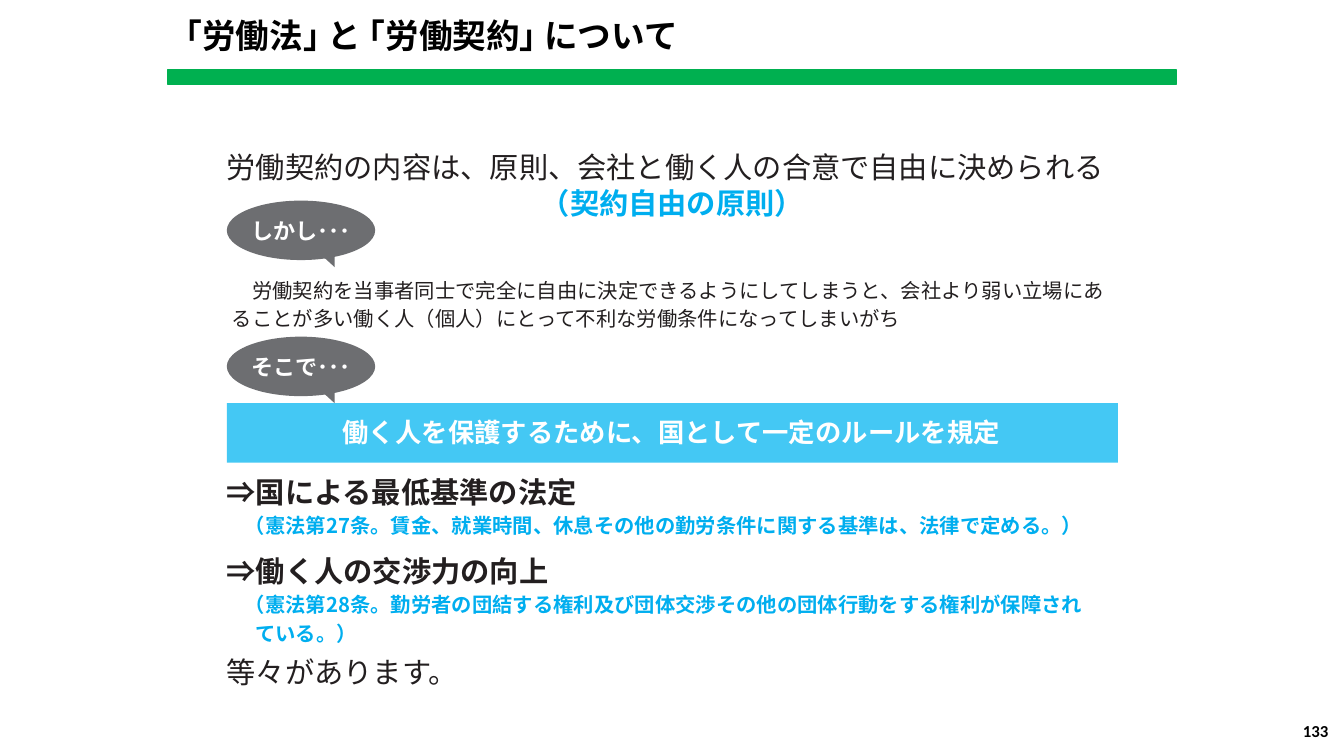
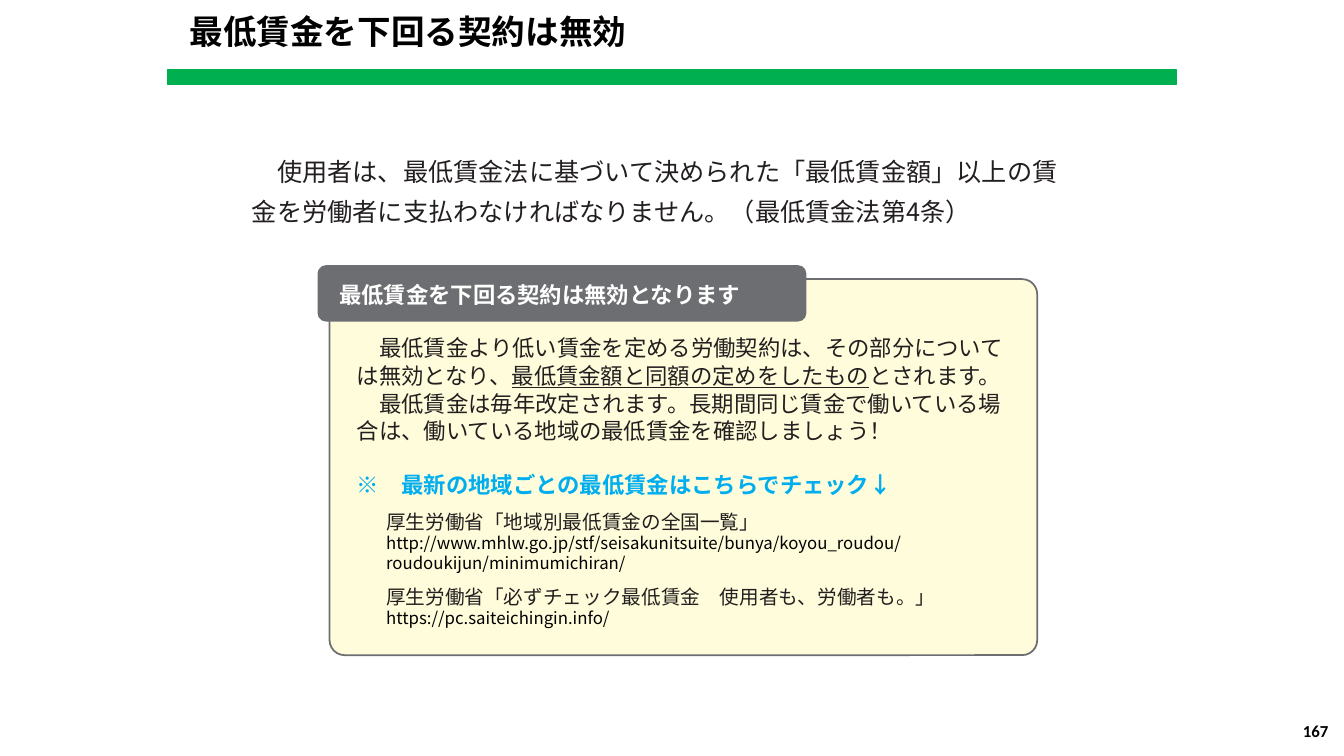
import pptx
import pptx.util
import pptx.dml.color
import pptx.enum.shapes
import pptx.enum.text
import pptx.oxml.ns
from lxml import etree

Pt = pptx.util.Pt
SHAPES = pptx.enum.shapes.MSO_SHAPE
ALIGN = pptx.enum.text.PP_ALIGN
ANCHOR = pptx.enum.text.MSO_ANCHOR
qn = pptx.oxml.ns.qn

COLORS = {
    "green": "00B050", "gray": "6D6E71", "sky": "44C8F4", "cyan": "00AEEF",
    "cream": "FFFCDB", "ink": "231F20", "black": "000000", "white": "FFFFFF",
}
JAPANESE = "Noto Sans CJK JP"

# Text formats
TITLE = {"size": 24, "color": "black", "bold": True}
NUMBER = {"size": 12, "color": "black", "bold": True, "name": "Calibri"}
LEAD = {"size": 20.9, "color": "ink"}
HEADING = LEAD | {"bold": True}
PRINCIPLE = HEADING | {"color": "cyan"}
BALLOON = {"size": 15.8, "color": "white", "bold": True}
BANNER = {"size": 18.8, "color": "white", "bold": True}
DETAIL = {"size": 14.5, "color": "ink"}
ARTICLE = {"size": 14.5, "color": "cyan", "bold": True}
INTRO = {"size": 18, "color": "ink"}
BODY = {"size": 16, "color": "ink"}
UNDERLINED = BODY | {"underline": True}
TAB = {"size": 16, "color": "white", "bold": True}
CHECK = TAB | {"color": "cyan"}
SOURCE = {"size": 14, "color": "ink"}
ADDRESS = {"size": 12, "color": "black"}


def write(shape, paragraphs, insets=(0, 0, 0, 0), anchor=ANCHOR.TOP, wrap=True):
    """Fill a shape with (paragraph format, [(text, font format), ...]) pairs."""
    frame = shape.text_frame
    frame_format = {"word_wrap": wrap, "vertical_anchor": anchor,
                    "auto_size": pptx.enum.text.MSO_AUTO_SIZE.NONE}
    sides = ("margin_left", "margin_top", "margin_right", "margin_bottom")
    frame_format |= {side: Pt(inset) for side, inset in zip(sides, insets)}
    for name, value in frame_format.items():
        setattr(frame, name, value)
    for index, (layout, runs) in enumerate(paragraphs):
        paragraph = frame.add_paragraph() if index else frame.paragraphs[0]
        defaults = {"alignment": ALIGN.LEFT, "space_before": Pt(0),
                    "space_after": Pt(0), "line_spacing": 1.0}
        for name, value in (defaults | layout).items():
            if name != "indent":
                setattr(paragraph, name, value)
        properties = paragraph._p.get_or_add_pPr()
        properties.set("marL", str(Pt(layout.get("indent", 0))))
        properties.set("indent", "0")
        etree.SubElement(properties, qn("a:buNone"))
        for text, style in runs:
            run = paragraph.add_run()
            run.text = text.rstrip("\n")
            font_format = {"name": JAPANESE, "bold": False} | style
            font_format["size"] = Pt(style["size"])
            color = font_format.pop("color")
            for name, value in font_format.items():
                setattr(run.font, name, value)
            run.font.color.rgb = pptx.dml.color.RGBColor.from_string(COLORS[color])
            east_asian = etree.SubElement(run._r.get_or_add_rPr(), qn("a:ea"))
            east_asian.set("typeface", font_format["name"])
            if text.endswith("\n"):
                paragraph.add_line_break()


def paint(shape, fill, line=None, width=1):
    """Give a shape a flat fill and an optional outline."""
    shape.shadow.inherit = False
    shape.fill.solid()
    shape.fill.fore_color.rgb = pptx.dml.color.RGBColor.from_string(COLORS[fill])
    if line:
        shape.line.color.rgb = pptx.dml.color.RGBColor.from_string(COLORS[line])
        shape.line.width = Pt(width)
    else:
        shape.line.fill.background()
    return shape


presentation = pptx.Presentation()
presentation.slide_width, presentation.slide_height = Pt(960), Pt(540)

# Shared frame: title, green band, page number
pages = [
    ("｢労働法｣ と ｢労働契約｣ について", 132.5, 1.0, "133"),
    ("最低賃金を下回る契約は無効", 135.4, Pt(25.5), "167"),
]
for title, left, spacing, number in pages:
    slide = presentation.slides.add_slide(presentation.slide_layouts[1])
    shape = slide.shapes.title
    shape.left, shape.top, shape.width, shape.height = Pt(left), Pt(10.8), Pt(420), Pt(32)
    write(shape, [({"line_spacing": spacing}, [(title, TITLE)])])
    band = slide.shapes.add_shape(SHAPES.RECTANGLE, Pt(120), Pt(49.7), Pt(720), Pt(10.8))
    paint(band, "green", "green")
    page_number = slide.shapes.add_textbox(Pt(732), Pt(511.2), Pt(224), Pt(28.8))
    write(page_number, [({"alignment": ALIGN.RIGHT}, [(number, NUMBER)])],
          (7.2, 3.6, 7.2, 3.6))

contract_slide, wage_slide = presentation.slides

# Slide 1: freedom of contract
shapes = contract_slide.shapes
principle = shapes.add_textbox(Pt(161.3), Pt(102.2), Pt(638), Pt(57))
write(principle, [
    ({"indent": 0.7}, [("労働契約の内容は、原則、会社と働く人の合意で自由に決められる", LEAD)]),
    ({"alignment": ALIGN.CENTER, "line_spacing": Pt(22.6), "space_before": Pt(3.5)},
     [("（契約自由の原則）", PRINCIPLE)]),
], (0, 4.3, 0, 0))

# Speech balloons with tails
for text, top in (("しかし･･･", 143.3), ("そこで･･･", 240.5)):
    builder = shapes.build_freeform(Pt(239), Pt(top + 28.8))
    builder.add_line_segments([(Pt(224), Pt(top + 33.8)), (Pt(239), Pt(top + 47.5))])
    paint(builder.convert_to_shape(), "gray")
    balloon = shapes.add_shape(SHAPES.OVAL, Pt(162), Pt(top), Pt(106), Pt(42.5))
    write(paint(balloon, "gray"), [({"alignment": ALIGN.CENTER}, [(text, BALLOON)])],
          anchor=ANCHOR.MIDDLE, wrap=False)

problem = shapes.add_textbox(Pt(161.3), Pt(191.5), Pt(638), Pt(42.5))
write(problem, [({"indent": 4.3, "line_spacing": 1.16, "space_before": Pt(15.7)}, [
    ("　労働契約を当事者同士で完全に自由に決定できるようにしてしまうと、会社より弱い立場に"
     "あることが多い働く人（個人）にとって不利な労働条件になってしまいがち", DETAIL)])],
    (0, 4.3, 0, 0))

banner = shapes.add_shape(SHAPES.RECTANGLE, Pt(162), Pt(288), Pt(636.5), Pt(42.5))
write(paint(banner, "sky"), [({"indent": 82.8, "space_before": Pt(9.6)}, [
    ("働く人を保護するために、国として一定のルールを規定", BANNER)])], (0, 9.4, 0, 9.4))

# Rules set by the state: indent, space before, text, format
rules = [
    (0.7, 5.4, "⇒国による最低基準の法定", HEADING),
    (13.7, 3.3, "（憲法第27条。賃金、就業時間、休息その他の勤労条件に関する基準は、法律で定める。）",
     ARTICLE),
    (0.7, 11.2, "⇒働く人の交渉力の向上", HEADING),
    (13.7, 2.3, "（憲法第28条。勤労者の団結する権利及び団体交渉その他の団体行動をする権利が保障され",
     ARTICLE),
    (20.9, 3.8, "ている。）", ARTICLE),
    (0.7, 5.9, "等々があります。", LEAD),
]
body = shapes.placeholders[1]
body.left, body.top, body.width, body.height = Pt(161.3), Pt(333.4), Pt(646), Pt(160.6)
write(body, [({"indent": indent, "space_before": Pt(before)}, [(text, style)])
             for indent, before, text, style in rules], (0, 5, 0, 0))

# Slide 2: minimum wage
shapes = wage_slide.shapes
intro = shapes.add_textbox(Pt(179.3), Pt(103.7), Pt(584), Pt(54.7))
write(intro, [({"indent": 0.7, "line_spacing": 1.33}, [
    ("　使用者は、最低賃金法に基づいて決められた「最低賃金額」以上の賃金を労働者に"
     "支払わなければなりません。（最低賃金法第4条）", INTRO)])], (0, 0.7, 0, 0))

panel = shapes.add_shape(SHAPES.ROUNDED_RECTANGLE, Pt(235.4), Pt(199.4), Pt(505.5), Pt(268.6))
panel.adjustments[0] = 0.04
paint(panel, "cream", "gray", 1.25)

tab = shapes.add_shape(SHAPES.ROUNDED_RECTANGLE, Pt(226.8), Pt(189.4), Pt(349.2), Pt(40.3))
tab.adjustments[0] = 0.15
write(paint(tab, "gray"), [({}, [("最低賃金を下回る契約は無効となります", TAB)])],
      (13.7, 9.4, 0, 0))

# Explanation and addresses, in front of the panel
body = shapes.placeholders[1]
panel.element.addnext(body.element)
body.left, body.top, body.width, body.height = Pt(254.2), Pt(238.3), Pt(471), Pt(212.4)
text_layout = {"indent": 0.7, "line_spacing": 1.03}
source_layout = {"indent": 21.6, "space_before": Pt(8)}
write(body, [
    (text_layout, [
        ("　最低賃金より低い賃金を定める労働契約は、その部分については無効となり、", BODY),
        ("最低賃金額と同額の定めをしたもの", UNDERLINED),
        ("とされます。", BODY)]),
    (text_layout, [
        ("　最低賃金は毎年改定されます。長期間同じ賃金で働いている場合は、"
         "働いている地域の最低賃金を確認しましょう！", BODY)]),
    ({"indent": 0.7, "space_before": Pt(19.4)}, [
        ("※　最新の地域ごとの最低賃金はこちらでチェック↓", CHECK)]),
    (source_layout, [
        ("厚生労働省「地域別最低賃金の全国一覧」\n", SOURCE),
        ("http://www.mhlw.go.jp/stf/seisakunitsuite/bunya/koyou_roudou/"
         "roudoukijun/minimumichiran/", ADDRESS)]),
    (source_layout, [
        ("厚生労働省「必ずチェック最低賃金　使用者も、労働者も。」\n", SOURCE),
        ("https://pc.saiteichingin.info/", ADDRESS)]),
])

presentation.save("out.pptx")
